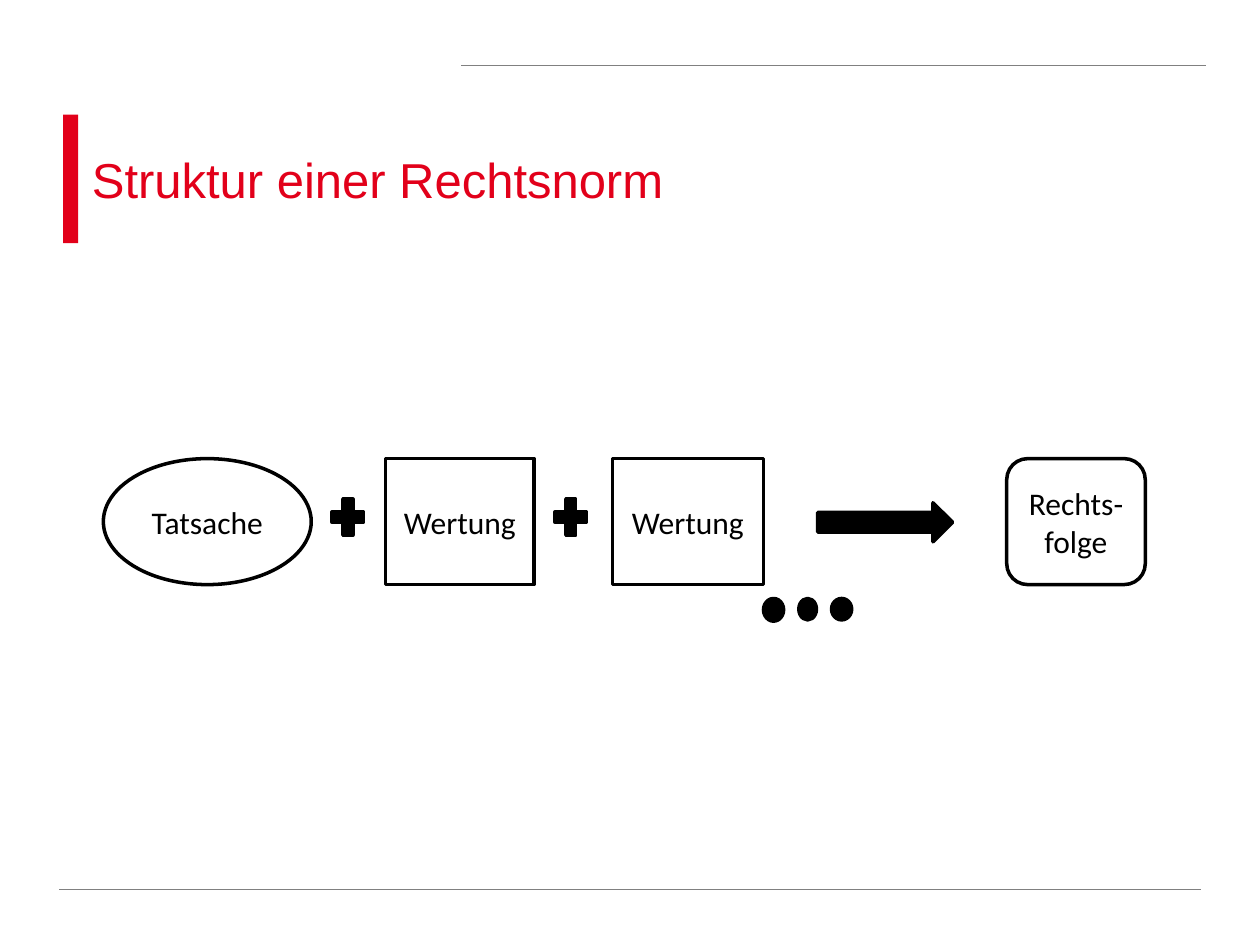
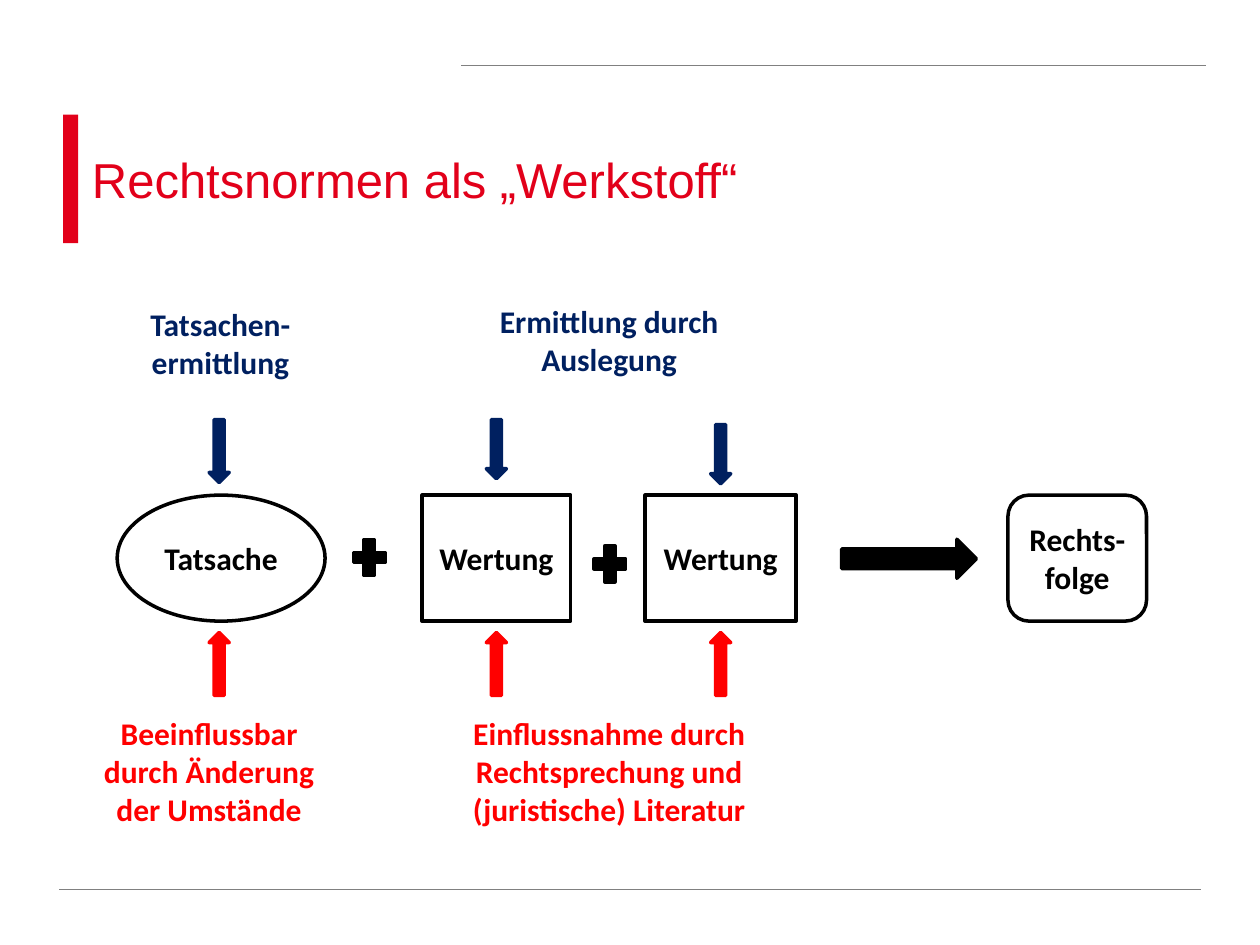
from dataclasses import dataclass

from lxml.etree import SubElement
from pptx import Presentation
from pptx.dml.color import RGBColor
from pptx.enum.shapes import MSO_CONNECTOR, MSO_SHAPE
from pptx.enum.text import MSO_ANCHOR, PP_ALIGN
from pptx.oxml.ns import qn
from pptx.util import Inches, Pt


@dataclass(frozen=True)
class Theme:
    accent: str = "E2001A"
    rule: str = "808080"
    ink: str = "000000"
    find: str = "002060"
    influence: str = "FF0000"
    title_font: str = "Arial"
    body_font: str = "Calibri"
    title_size: int = 28
    body_size: int = 18
    outline: float = 2
    hairline: float = 0.25


THEME = Theme()


def write(sp, text, *, size=THEME.body_size, font=THEME.body_font,
          color=THEME.ink, bold=False, align=PP_ALIGN.CENTER, inset=None):
    """Put one formatted paragraph into a shape, centred vertically."""
    tf = sp.text_frame
    tf.word_wrap = True
    tf.vertical_anchor = MSO_ANCHOR.MIDDLE
    if inset is not None:
        tf.margin_left = tf.margin_right = Inches(inset)
        tf.margin_top = tf.margin_bottom = Inches(inset)
    p = tf.paragraphs[0]
    p.alignment = align
    r = p.add_run()
    r.text = text
    r.font.name, r.font.size, r.font.bold = font, Pt(size), bold
    r.font.color.rgb = RGBColor.from_string(color)


class Deck:
    def __init__(self, theme):
        self.theme = theme
        self.prs = Presentation()
        self.prs.slide_width, self.prs.slide_height = Inches(10), Inches(7.5)
        self.s = None

    # Shared frame: red bar, two hairlines, title
    def slide(self, title):
        t = self.theme
        self.s = self.prs.slides.add_slide(self.prs.slide_layouts[6])
        self.shape(MSO_SHAPE.RECTANGLE, 0.5, 0.91, 0.12, 1.02, fill=t.accent)
        self.rule(3.66, 9.57, 0.52)
        self.rule(0.47, 9.53, 7.06)
        self.text(title, 0.69, 0.91, 8.86, 1.02, size=t.title_size,
                  font=t.title_font, color=t.accent, align=PP_ALIGN.LEFT,
                  inset=0.04)

    def rule(self, x1, x2, y):
        line = self.s.shapes.add_connector(
            MSO_CONNECTOR.STRAIGHT, Inches(x1), Inches(y), Inches(x2), Inches(y))
        line.line.color.rgb = RGBColor.from_string(self.theme.rule)
        line.line.width = Pt(self.theme.hairline)
        SubElement(line._element.spPr, qn("a:effectLst"))

    def shape(self, kind, x, y, w, h, fill=None, line=None):
        sp = self.s.shapes.add_shape(
            kind, Inches(x), Inches(y), Inches(w), Inches(h))
        sp.shadow.inherit = False
        if fill:
            sp.fill.solid()
            sp.fill.fore_color.rgb = RGBColor.from_string(fill)
        else:
            sp.fill.background()
        if line:
            sp.line.color.rgb = RGBColor.from_string(line)
            sp.line.width = Pt(self.theme.outline)
        else:
            sp.line.fill.background()
        return sp

    def solid(self, kind, x, y, w, h, color=THEME.ink):
        return self.shape(kind, x, y, w, h, fill=color, line=color)

    def node(self, kind, text, x, y, w, bold):
        sp = self.shape(kind, x, y, w, 1, line=self.theme.ink)
        write(sp, text, bold=bold)

    def text(self, text, x, y, w, h, **fmt):
        box = self.s.shapes.add_textbox(
            Inches(x), Inches(y), Inches(w), Inches(h))
        write(box, text, **fmt)

    # Facts plus valuations lead to the legal consequence
    def norm(self, top, lefts, pluses, arrow_x, result_x, bold=False):
        self.solid(MSO_SHAPE.RIGHT_ARROW, arrow_x, top + 0.35, 1.07, 0.31)
        self.node(MSO_SHAPE.ROUNDED_RECTANGLE, "Rechts-folge",
                  result_x, top, 1.1, bold)
        conditions = [(MSO_SHAPE.OVAL, "Tatsache", 1.65),
                      (MSO_SHAPE.RECTANGLE, "Wertung", 1.18),
                      (MSO_SHAPE.RECTANGLE, "Wertung", 1.2)]
        for (kind, label, w), x in zip(conditions, lefts):
            self.node(kind, label, x, top, w, bold)
        for x, y in pluses:
            self.solid(MSO_SHAPE.MATH_PLUS, x, y, 0.34, 0.39)


def build_structure(deck):
    deck.slide("Struktur einer Rechtsnorm")
    deck.norm(3.64, (0.82, 3.06, 4.86), ((2.59, 3.91), (4.36, 3.91)),
              arrow_x=6.49, result_x=7.99)
    # Dots: further conditions may follow
    for x, w, h in ((6.06, 0.16, 0.18), (6.34, 0.14, 0.17), (6.6, 0.16, 0.17)):
        deck.solid(MSO_SHAPE.FLOWCHART_CONNECTOR, x, 4.75, w, h)


def build_material(deck):
    t = deck.theme
    deck.slide("Rechtsnormen als „Werkstoff“")
    deck.norm(3.93, (0.93, 3.35, 5.12), ((2.76, 4.23), (4.67, 4.28)),
              arrow_x=6.68, result_x=8, bold=True)

    # Explanations above and below the conditions
    for label, x, y, w, color in (
            ("Tatsachen-ermittlung", 0.78, 2.22, 1.94, t.find),
            ("Ermittlung durch Auslegung", 3.35, 2.2, 2.97, t.find),
            ("Beeinflussbar durch Änderung der Umstände",
             0.69, 5.62, 1.94, t.influence),
            ("Einflussnahme durch Rechtsprechung und (juristische) Literatur",
             3.35, 5.62, 2.97, t.influence)):
        deck.text(label, x, y, w, 1, color=color, bold=True)

    # Arrows pointing at each condition
    for x, y, h in ((1.66, 3.33, 0.5), (3.86, 3.33, 0.47), (5.64, 3.37, 0.47)):
        deck.solid(MSO_SHAPE.DOWN_ARROW, x, y, 0.16, h, t.find)
        deck.solid(MSO_SHAPE.UP_ARROW, x, 5.02, 0.16, 0.5, t.influence)


def main():
    deck = Deck(THEME)
    build_structure(deck)
    build_material(deck)
    deck.prs.save("out.pptx")


if __name__ == "__main__":
    main()
